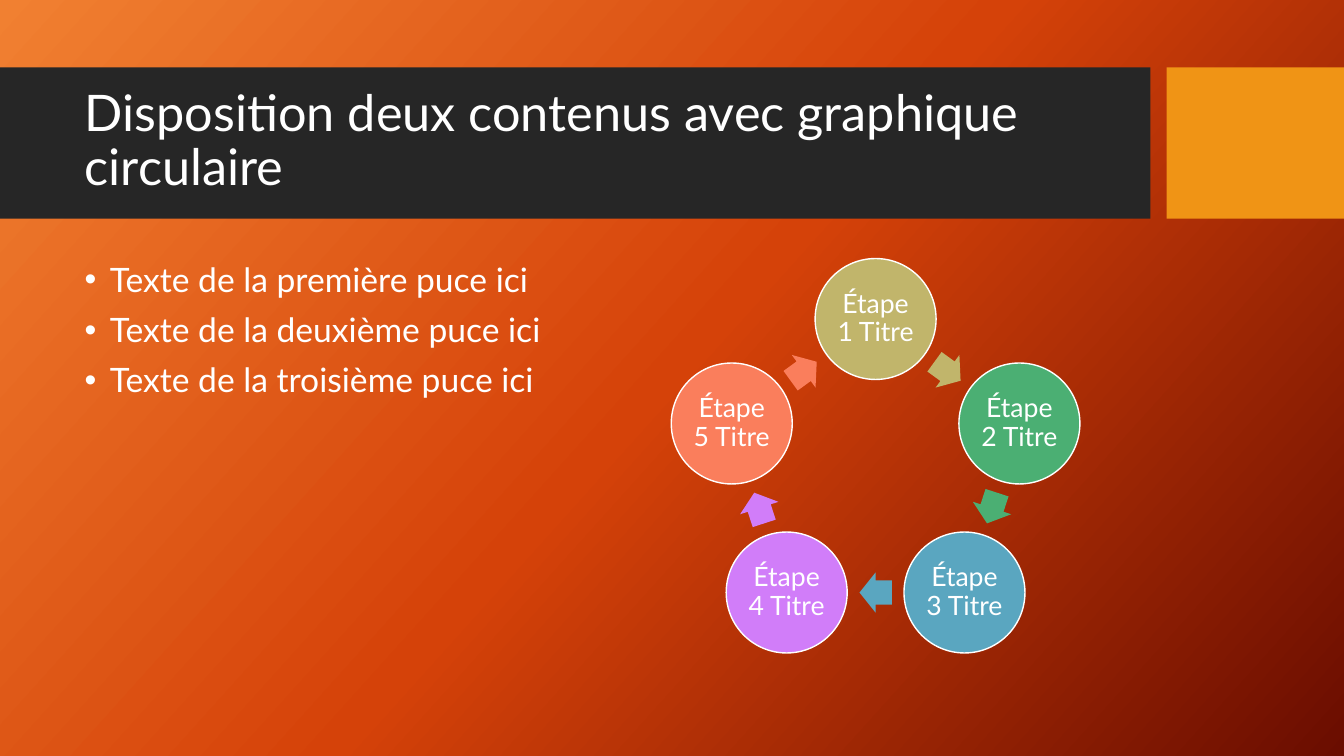
import copy
import math

import pptx
import pptx.dml.color
import pptx.enum.shapes
import pptx.enum.text
import pptx.oxml.ns
import pptx.util

WIDTH = pptx.util.Inches(13.33)
HEIGHT = pptx.util.Inches(7.5)
FONT = "Lato"
WHITE = "FFFFFF"
SHAPE = pptx.enum.shapes.MSO_SHAPE
ALIGN = pptx.enum.text.PP_ALIGN
ANCHOR = pptx.enum.text.MSO_ANCHOR
qname = pptx.oxml.ns.qn

BACK = [(0, "F18031"), (0.5, "D54209"), (1, "6A0D00")]
TITLE = "Disposition deux contenus avec graphique circulaire"
POINTS = [
    "Texte de la première puce ici",
    "Texte de la deuxième puce ici",
    "Texte de la troisième puce ici",
]
STEPS = [
    ("Étape 1 Titre", "C1B56B"),
    ("Étape 2 Titre", "4BAF73"),
    ("Étape 3 Titre", "5AA6C0"),
    ("Étape 4 Titre", "D17DF9"),
    ("Étape 5 Titre", "FA7E5C"),
]


def color(code):
    return pptx.dml.color.RGBColor.from_string(code)


def area(left, top, width, height):
    return [
        round(share * size / 100)
        for share, size in zip((left, top, width, height), (WIDTH, HEIGHT) * 2)
    ]


def paint(slide):
    fill = slide.background.fill
    fill.gradient()
    fill.gradient_angle = 318
    first = next(slide.background._cSld.iter(qname("a:gs")))
    first.addnext(copy.deepcopy(first))
    for stop, (place, code) in zip(fill.gradient_stops, BACK):
        stop.position = place
        stop.color.rgb = color(code)


def draw(slide, kind, box, code):
    shape = slide.shapes.add_shape(kind, *box)
    shape.shadow.inherit = False
    shape.fill.solid()
    shape.fill.fore_color.rgb = color(code)
    shape.line.fill.background()
    return shape


def band(slide, box, code):
    shape = draw(slide, SHAPE.RECTANGLE, box, code)
    slide.shapes._spTree.insert(2, shape._element)


def style(para, size, align=ALIGN.LEFT):
    para.alignment = align
    para.line_spacing = 0.9
    para.space_before = pptx.util.Pt(0)
    para.font.size = pptx.util.Pt(size)
    para.font.name = FONT
    para.font.color.rgb = color(WHITE)


def place(holder, box, anchor):
    holder.left, holder.top, holder.width, holder.height = box
    frame = holder.text_frame
    frame.word_wrap = True
    frame.auto_size = pptx.enum.text.MSO_AUTO_SIZE.NONE
    frame.vertical_anchor = anchor
    return frame


def head(slide):
    frame = place(slide.shapes.title, area(5.55, 10.93, 78.85, 15.73), ANCHOR.MIDDLE)
    frame.text = TITLE
    style(frame.paragraphs[0], 36)


def bullet(para):
    props = para._p.get_or_add_pPr()
    props.set("marL", str(pptx.util.Inches(0.25)))
    props.set("indent", str(-pptx.util.Inches(0.25)))
    for tag, key, value in (("a:buFont", "typeface", "Arial"), ("a:buChar", "char", "•")):
        props.append(props.makeelement(qname(tag), {key: value}))


def body(slide):
    frame = place(slide.placeholders[1], area(5.55, 34.13, 38.56, 52.53), ANCHOR.TOP)
    frame.text = "\n".join(POINTS)
    for index, para in enumerate(frame.paragraphs):
        bullet(para)
        style(para, 24)
        if index:
            para.space_before = pptx.util.Pt(10)


def polar(angle, radius):
    turn = math.radians(angle)
    left = 65.15 * WIDTH / 100 + radius * math.sin(turn)
    top = 62.2 * HEIGHT / 100 - radius * math.cos(turn)
    return left, top


def center(point, width, height):
    left, top = point
    return [round(n) for n in (left - width / 2, top - height / 2, width, height)]


def disk(slide, point, label, code):
    size = HEIGHT * 0.16
    shape = draw(slide, SHAPE.OVAL, center(point, size, size), code)
    shape.line.color.rgb = color(WHITE)
    shape.line.width = pptx.util.Pt(1)
    frame = shape.text_frame
    frame.word_wrap = True
    frame.vertical_anchor = ANCHOR.MIDDLE
    inset = pptx.util.Inches(0.03)
    frame.margin_left = frame.margin_right = inset
    frame.margin_top = frame.margin_bottom = inset
    frame.text = label
    style(frame.paragraphs[0], 19, ALIGN.CENTER)


def arrow(slide, point, turn, code):
    box = center(point, pptx.util.Inches(0.32), pptx.util.Inches(0.4))
    shape = draw(slide, SHAPE.RIGHT_ARROW, box, code)
    shape.adjustments[0] = 0.6
    shape.adjustments[1] = 0.5
    shape.rotation = turn


def cycle(slide):
    radius = HEIGHT * 0.2
    step = 360 / len(STEPS)
    inner = radius * math.cos(math.radians(step / 2))
    for index, (label, code) in enumerate(STEPS):
        angle = index * step
        middle = angle + step / 2
        disk(slide, polar(angle, radius), label, code)
        arrow(slide, polar(middle, inner), middle, code)


def main():
    deck = pptx.Presentation()
    deck.slide_width = WIDTH
    deck.slide_height = HEIGHT
    slide = deck.slides.add_slide(deck.slide_layouts[1])
    paint(slide)
    band(slide, area(0, 8.93, 85.6, 20), "262626")
    band(slide, area(86.8, 8.93, 13.2, 20), "F09415")
    head(slide)
    body(slide)
    cycle(slide)
    deck.save("out.pptx")


if __name__ == "__main__":
    main()
